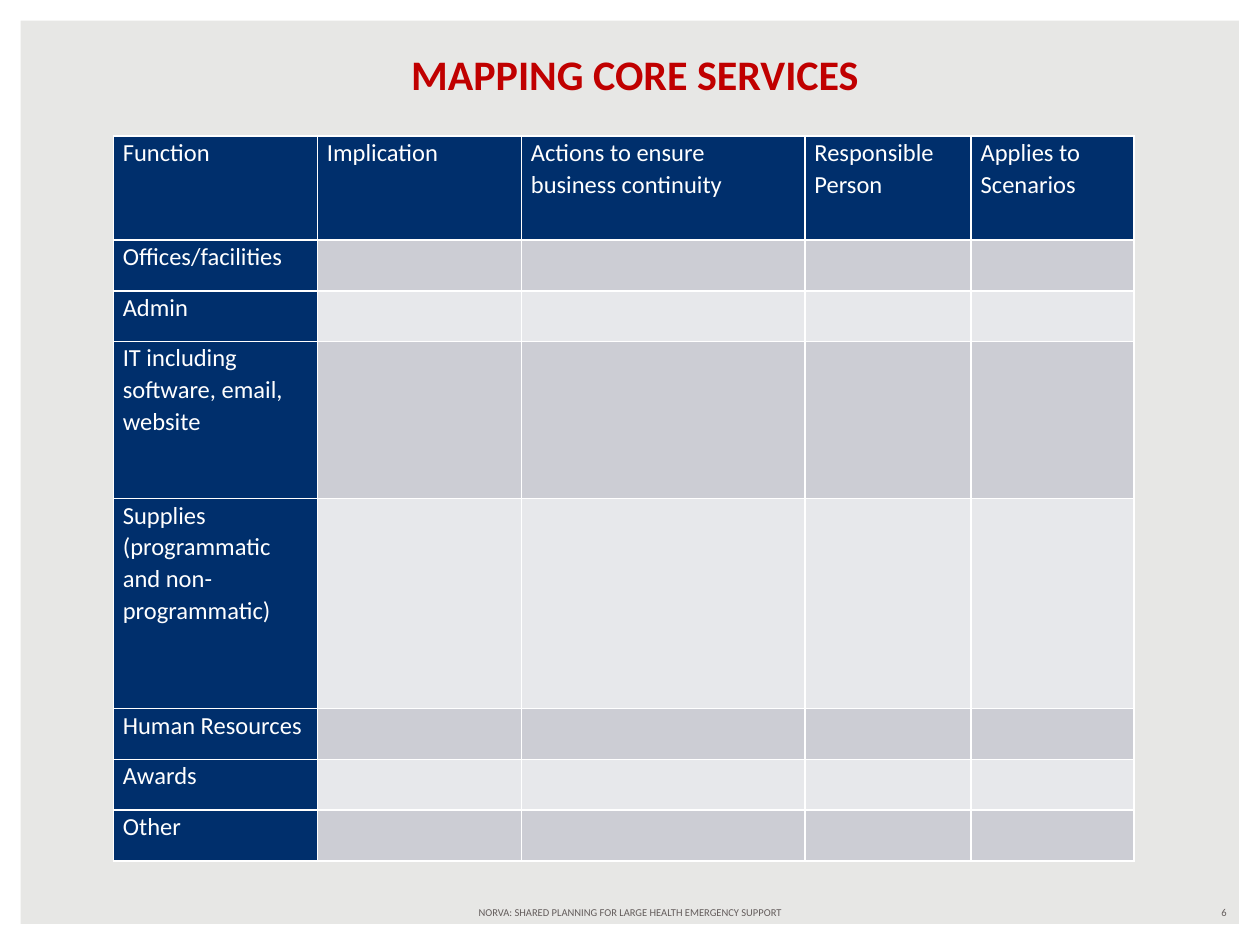
from lxml import etree
from pptx import Presentation
from pptx.dml.color import RGBColor
from pptx.enum import shapes, text
from pptx.oxml.ns import qn
from pptx.util import Pt

FONT = "Calibri"
WHITE, NAVY, RED, GREY = "FFFFFF", "002F6C", "C00000", "635C5B"
BACKGROUND = "E7E7E5"
BANDS = ["CCCDD4", "E7E8EB"]
WIDTH, HEIGHT = 720, 540

HEADERS = ["Function", "Implication", "Actions to ensure business continuity",
           "Responsible Person", "Applies to Scenarios"]
COLUMN_WIDTHS = [116.6, 116.6, 162, 95, 93]
HEADER_HEIGHT = 59.4
FUNCTIONS = [
    ("Offices/facilities", 29),
    ("Admin", 29),
    ("IT including software, email, website", 89.8),
    ("Supplies (programmatic and non-programmatic)", 120),
    ("Human Resources", 29),
    ("Awards", 29),
    ("Other", 29),
]
TABLE_LEFT, TABLE_TOP = 64.8, 77.8

CENTER, RIGHT = text.PP_ALIGN.CENTER, text.PP_ALIGN.RIGHT
BOTTOM, MIDDLE = text.MSO_ANCHOR.BOTTOM, text.MSO_ANCHOR.MIDDLE
# wording, (left, top, width, height), size, colour, bold, alignment, anchor
TEXTS = [
    ("MAPPING CORE SERVICES", (56.9, 23.8, 612, 36), 24, RED, True, CENTER, BOTTOM),
    ("NORVA: SHARED PLANNING FOR LARGE HEALTH EMERGENCY SUPPORT",
     (246, 514, 228, 14.4), 6, GREY, False, CENTER, MIDDLE),
    ("6", (540, 514, 168, 14.4), 6, GREY, False, RIGHT, MIDDLE),
]


def paint(fill, color):
    fill.solid()
    fill.fore_color.rgb = RGBColor.from_string(color)


def add_run(paragraph, wording, size, color, bold=False):
    run = paragraph.add_run()
    run.text = wording
    run.font.name = FONT
    run.font.size = Pt(size)
    run.font.bold = bold
    run.font.color.rgb = RGBColor.from_string(color)


def add_text(slide, wording, box, size, color, bold, alignment, anchor):
    frame = slide.shapes.add_textbox(*map(Pt, box)).text_frame
    frame.word_wrap = True
    frame.vertical_anchor = anchor
    paragraph = frame.paragraphs[0]
    paragraph.alignment = alignment
    add_run(paragraph, wording, size, color, bold)


def set_borders(cell):
    """Draw thin white cell borders, placed before the fill as the schema asks."""
    properties = cell._tc.get_or_add_tcPr()
    for position, tag in enumerate(["a:lnL", "a:lnR", "a:lnT", "a:lnB"]):
        line = etree.Element(qn(tag), w=str(Pt(1)))
        fill = etree.SubElement(line, qn("a:solidFill"))
        etree.SubElement(fill, qn("a:srgbClr"), val=WHITE)
        properties.insert(position, line)


def add_table(slide):
    rows = [HEADERS] + [[name] + [""] * (len(HEADERS) - 1) for name, _ in FUNCTIONS]
    heights = [HEADER_HEIGHT] + [height for _, height in FUNCTIONS]
    table = slide.shapes.add_table(
        len(rows), len(HEADERS), Pt(TABLE_LEFT), Pt(TABLE_TOP),
        Pt(sum(COLUMN_WIDTHS)), Pt(sum(heights))).table
    for column, width in zip(table.columns, COLUMN_WIDTHS):
        column.width = Pt(width)
    for r, (wordings, height) in enumerate(zip(rows, heights)):
        table.rows[r].height = Pt(height)
        for c, wording in enumerate(wordings):
            cell = table.cell(r, c)
            cell.margin_left = cell.margin_right = Pt(5.4)
            cell.margin_top = cell.margin_bottom = 0
            paint(cell.fill, NAVY if r == 0 or c == 0 else BANDS[(r - 1) % 2])
            set_borders(cell)
            if wording:
                paragraph = cell.text_frame.paragraphs[0]
                paragraph.line_spacing = 1.07
                add_run(paragraph, wording, 14, WHITE)


def main():
    presentation = Presentation()
    presentation.slide_width, presentation.slide_height = Pt(WIDTH), Pt(HEIGHT)
    slide = presentation.slides.add_slide(presentation.slide_layouts[6])
    paint(slide.background.fill, BACKGROUND)

    border = slide.shapes.add_shape(shapes.MSO_SHAPE.FRAME, 0, 0, Pt(WIDTH), Pt(HEIGHT))
    border.adjustments[0] = 0.022
    border.shadow.inherit = False
    border.line.fill.background()
    paint(border.fill, WHITE)

    for item in TEXTS:
        add_text(slide, *item)
    add_table(slide)
    presentation.save("out.pptx")


if __name__ == "__main__":
    main()
